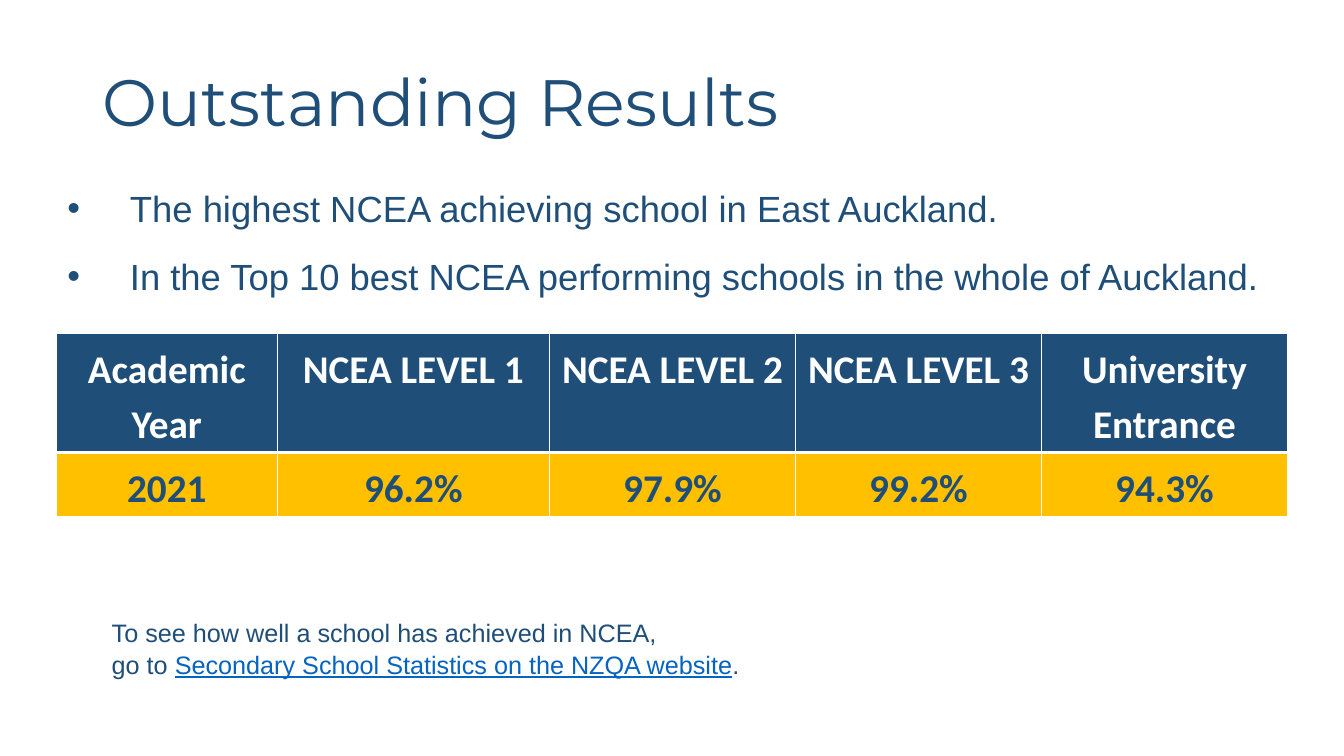
import pptx
import pptx.dml.color
import pptx.enum.text
import pptx.oxml
import pptx.oxml.ns
import pptx.util

SLIDE_W, SLIDE_H = 13.33, 7.5
NAVY, GOLD, WHITE, LINK = "1F4E79", "FFC000", "FFFFFF", "0563C1"
TITLE = {"size": pptx.util.Pt(46.8), "name": "Montserrat"}
BODY = {"size": pptx.util.Pt(26), "name": "Arial"}
NOTE = {"size": pptx.util.Pt(18), "name": "Arial"}
CELL = {"size": pptx.util.Pt(28), "name": "Calibri", "bold": True}
COLUMNS = [2.19, 2.7, 2.44, 2.44, 2.44]
ROWS = [1.18, 0.64]
RESULTS = [
    ["Academic Year", "NCEA LEVEL 1", "NCEA LEVEL 2", "NCEA LEVEL 3", "University Entrance"],
    ["2021", "96.2%", "97.9%", "99.2%", "94.3%"],
]


def rgb(value):
    """Turn a hex string into a colour."""
    return pptx.dml.color.RGBColor.from_string(value)


def inches(values):
    """Turn lengths in inches into slide units."""
    return [pptx.util.Inches(v) for v in values]


def add_xml(parent, xml):
    """Append a drawing element given as XML with its namespace left out."""
    tag, rest = xml.split(" ", 1)
    parent.append(pptx.oxml.parse_xml(f"{tag} {pptx.oxml.ns.nsdecls('a')} {rest}"))


def add_run(p, text, style, color, **extra):
    """Add a run with the given font values."""
    r = p.add_run()
    r.text = text
    for key, value in {**style, **extra}.items():
        setattr(r.font, key, value)
    r.font.color.rgb = rgb(color)


def add_box(slide, box, anchor):
    """Add a wrapping text box and return its text frame."""
    tf = slide.shapes.add_textbox(*inches(box)).text_frame
    tf.word_wrap = True
    tf.vertical_anchor = anchor
    return tf


def add_paragraph(tf, index, **form):
    """Return the paragraph at an index, added when needed, with its format set."""
    p = tf.add_paragraph() if index else tf.paragraphs[0]
    for key, value in form.items():
        setattr(p, key, value)
    return p


def add_title(slide, box, text):
    """Place the heading at the bottom of its box."""
    tf = add_box(slide, box, pptx.enum.text.MSO_ANCHOR.BOTTOM)
    add_run(add_paragraph(tf, 0, line_spacing=1.4), text, TITLE, NAVY)


def add_bullets(slide, box, items):
    """Place the bulleted claims."""
    tf = add_box(slide, box, pptx.enum.text.MSO_ANCHOR.MIDDLE)
    indent = pptx.util.Inches(0.62)
    for i, item in enumerate(items):
        p = add_paragraph(tf, i, line_spacing=1.5, space_before=pptx.util.Pt(2 if i else 0))
        pPr = p._p.get_or_add_pPr()
        pPr.set("marL", str(indent))
        pPr.set("indent", str(-indent))
        add_xml(pPr, '<a:buFont typeface="Arial"/>')
        add_xml(pPr, '<a:buChar char="•"/>')
        add_run(p, item, BODY, NAVY)


def add_cell(cell, text, fill, color, bottom, top):
    """Fill one table cell with centred text and white borders."""
    cell.fill.background()
    tcPr = cell._tc.get_or_add_tcPr()
    for child in list(tcPr):
        tcPr.remove(child)
    for side, width in {"L": 1, "R": 1, "T": top, "B": bottom}.items():
        add_xml(tcPr, f'<a:ln{side} w="{pptx.util.Pt(width)}"><a:solidFill>'
                      f'<a:srgbClr val="{WHITE}"/></a:solidFill></a:ln{side}>')
    cell.fill.solid()
    cell.fill.fore_color.rgb = rgb(fill)
    p = add_paragraph(cell.text_frame, 0, alignment=pptx.enum.text.PP_ALIGN.CENTER,
                      line_spacing=1.15, space_after=pptx.util.Pt(8))
    add_run(p, text, CELL, color)


def add_results(slide, left, top):
    """Place the results table with a navy header over a gold row."""
    box = [left, top, sum(COLUMNS), sum(ROWS)]
    table = slide.shapes.add_table(len(ROWS), len(COLUMNS), *inches(box)).table
    for column, width in zip(table.columns, inches(COLUMNS)):
        column.width = width
    looks = [(NAVY, WHITE, 3, 1), (GOLD, NAVY, 1, 3)]
    for i, (height, look) in enumerate(zip(inches(ROWS), looks)):
        table.rows[i].height = height
        for j, text in enumerate(RESULTS[i]):
            add_cell(table.cell(i, j), text, *look)


def add_note(slide, box):
    """Place the closing note with its underlined reference."""
    tf = add_box(slide, box, pptx.enum.text.MSO_ANCHOR.MIDDLE)
    after = pptx.util.Pt(1.5)
    p = add_paragraph(tf, 0, space_after=after)
    add_run(p, "To see how well a school has achieved in NCEA,", NOTE, NAVY)
    p = add_paragraph(tf, 1, space_after=after)
    add_run(p, "go to ", NOTE, NAVY)
    add_run(p, "Secondary School Statistics on the NZQA website", NOTE, LINK, underline=True)
    add_run(p, ".", NOTE, NAVY)


def main():
    """Build and save the results slide."""
    prs = pptx.Presentation()
    prs.slide_width, prs.slide_height = inches([SLIDE_W, SLIDE_H])
    slide = prs.slides.add_slide(prs.slide_layouts[6])
    add_title(slide, [0.92, 0.29, 11.5, 1.14], "Outstanding Results")
    add_bullets(slide, [0.57, 1.26, 12.21, 2.06], [
        "The highest NCEA achieving school in East Auckland.",
        "In the Top 10 best NCEA performing schools in the whole of Auckland.",
    ])
    add_results(slide, 0.56, 3.31)
    add_note(slide, [1.01, 5.65, 9.27, 1.56])
    prs.save("out.pptx")


if __name__ == "__main__":
    main()
